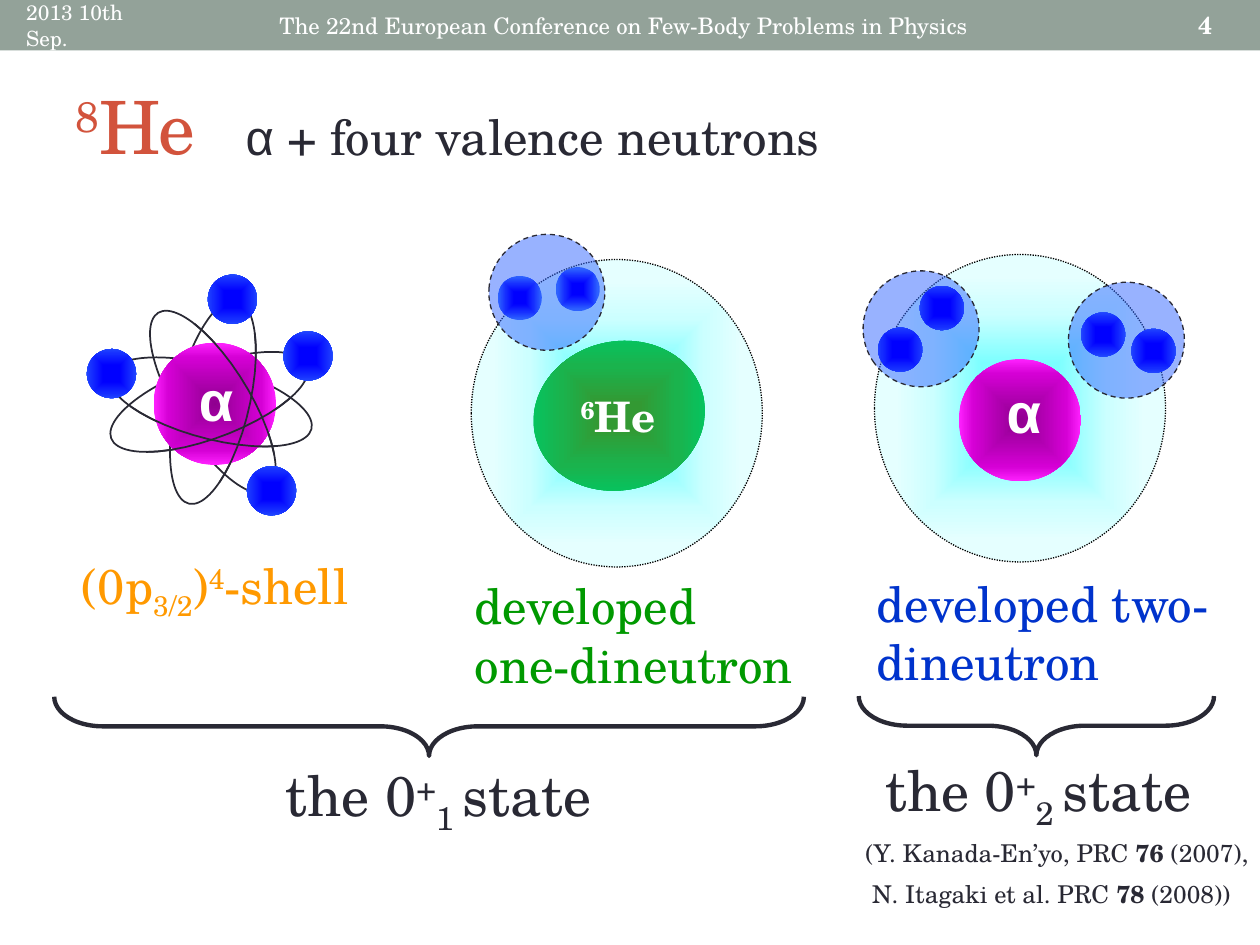
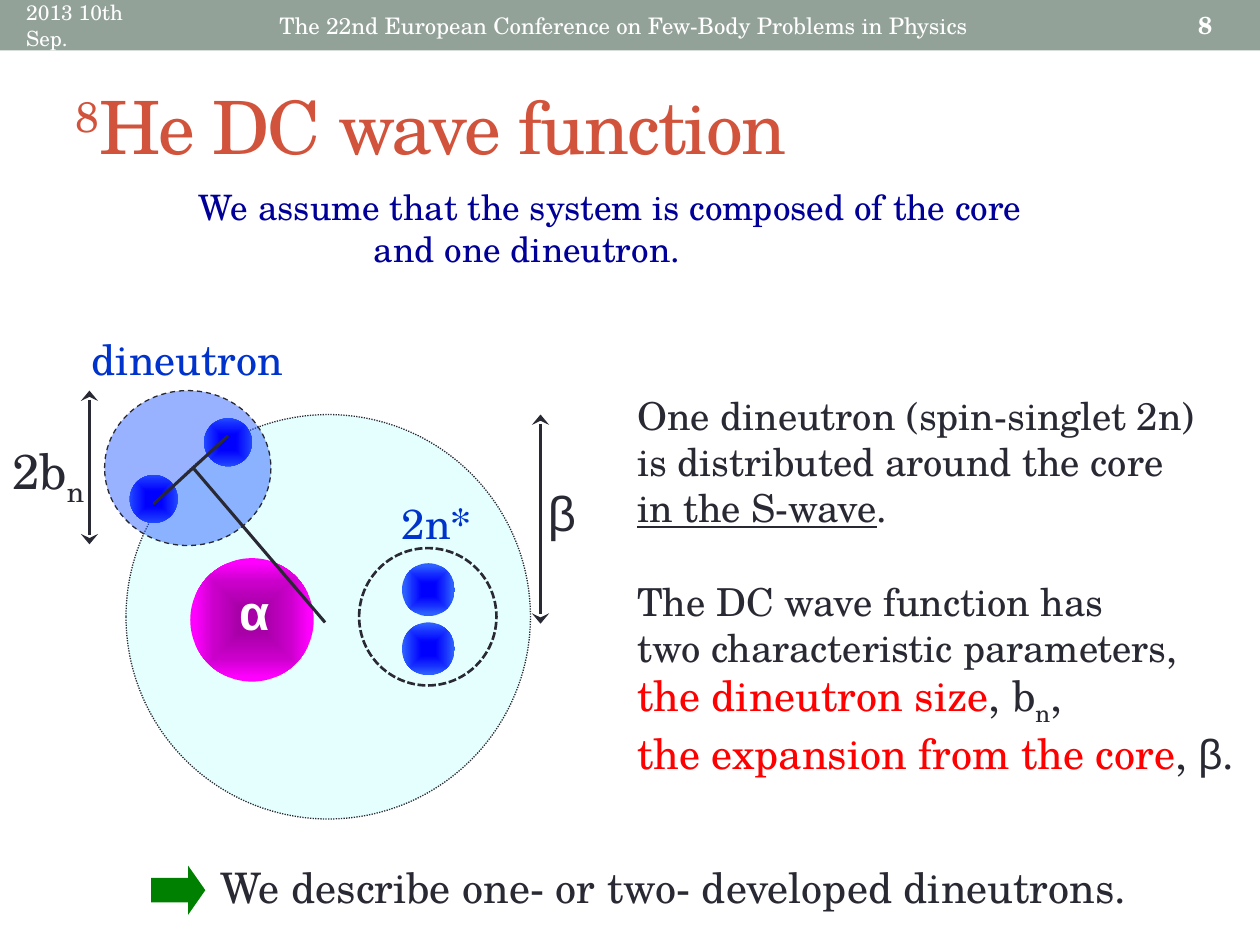
from math import cos, radians, sin

from lxml import etree
from pptx import Presentation
from pptx.dml.color import RGBColor
from pptx.enum.dml import MSO_LINE
from pptx.enum.shapes import MSO_CONNECTOR, MSO_SHAPE
from pptx.enum.text import MSO_ANCHOR, PP_ALIGN
from pptx.oxml.ns import qn
from pptx.util import Inches, Pt

OVAL, RECT = MSO_SHAPE.OVAL, MSO_SHAPE.RECTANGLE
BRACE, ARROW = MSO_SHAPE.RIGHT_BRACE, MSO_SHAPE.RIGHT_ARROW
DOT, SHORT_DASH, DASH = MSO_LINE.ROUND_DOT, MSO_LINE.SQUARE_DOT, MSO_LINE.DASH
TOP, MIDDLE = MSO_ANCHOR.TOP, MSO_ANCHOR.MIDDLE
LEFT, CENTER = PP_ALIGN.LEFT, PP_ALIGN.CENTER

SERIF, SANS = "TeX Gyre Schola", "Arial"
INK, WHITE, BAND, TITLE = "292934", "FFFFFF", "93A299", "D2533C"
ORANGE, GREEN, BLUE, NAVY, RED = "FF9900", "009900", "0033CC", "000099", "FF0000"
ARROW_GREEN, DINEUTRON_BLUE, PALE_CYAN = "008000", "3366FF", "CCFFFF"

# Gradients run from the centre outwards: (percent, colour)
NEUTRON_GLOW = [(25, "0000FF"), (59, "152DFF"), (91, "2D61FF")]
ALPHA_GLOW = [(0, "8F008F"), (76, "D500D5"), (100, "FF21FF")]
BRIGHT_ALPHA_GLOW = [(19, "A600A6"), (63, "CC00CC"), (93, "FF00FF")]
HALO_GLOW = [(26, "7BFFFF"), (60, "CCFFFF"), (86, "E5FFFF")]
HE6_GLOW = [(13, "339933"), (54, "1AB34D"), (92, "00C864")]

SUP, SUB = {"base": 30}, {"base": -25}
BOLD, GREEK = {"bold": True}, {"font": SANS}

DATE = "2013 10th Sep."
CONFERENCE = "The 22nd European Conference on Few-Body Problems in Physics"

# A paragraph is a list of runs; a run is a string or (string, style).
# Labels: (left, top, width, height), size, colour, paragraphs
STATE_LABELS = [
    ((1.85, 0.8, 5.32, 0.57), 28, INK, [[("α", GREEK), " + four valence neutrons"]]),
    ((0.55, 4.36, 2.44, 0.57), 28, ORANGE,
     [["(0p", ("3/2", SUB), ")", ("4", SUP), "-shell"]]),
    ((3.67, 4.52, 2.78, 1.04), 28, GREEN, [["developed one-dineutron"]]),
    ((6.86, 4.5, 2.85, 1.04), 28, BLUE, [["developed two-dineutron"]]),
    ((2.17, 5.99, 3.38, 0.64), 32, INK,
     [["the 0", ("+", SUP), ("1 ", SUB), "state"]]),
    ((6.93, 5.95, 2.95, 0.64), 32, INK,
     [["the 0", ("+", SUP), ("2 ", SUB), "state"]]),
]
REFERENCES = [
    ["(Y. Kanada-En’yo, PRC ", ("76 ", BOLD), "(2007),"],
    [" N. Itagaki et al. PRC ", ("78", BOLD), " (2008))"],
]
BRACES = [(3.17, 2.79, 0.47, 5.95), (7.99, 4.35, 0.47, 2.82)]

# Shell model: (centre x, tilt) of each orbit, (left, top) of each neutron
ORBITS = [(1.69, 328.5), (1.69, 13.3), (1.67, 105.1), (1.66, 69.6)]
ORBIT_Y, ORBIT_RX, ORBIT_RY = 3.19, 0.29, 0.83
FRONT_ANGLE, FRONT_STEPS = 47, 11
SHELL_NEUTRONS = [(1.65, 2.18), (1.96, 3.7), (0.69, 2.77), (2.25, 2.63)]

# Dineutrons: (box, tilt), then (left, top, tilt) of the two neutrons
ONE_DINEUTRON = [
    ((3.88, 1.86, 0.92, 0.92), 3.7, [(3.95, 2.19, 356.7), (4.41, 2.12, 0)]),
]
TWO_DINEUTRONS = [
    ((6.85, 2.15, 0.92, 0.92), 324.1, [(6.97, 2.6, 317.1), (7.3, 2.27, 320.4)]),
    ((8.48, 2.24, 0.92, 0.92), 30.8, [(8.58, 2.48, 23.8), (8.98, 2.61, 27)]),
]

ASSUMPTION = [["We assume that the system is composed of the core and one dineutron."]]
EXPLANATION = [
    ["One dineutron (spin-singlet 2n)"],
    ["is distributed around the core"],
    [("in the S-wave", {"underline": True}), "."],
    ["The DC wave function has"],
    ["two characteristic parameters,"],
]
PARAMETERS = [
    [("the dineutron size", {"color": RED}), ", b", ("n", SUB), ","],
    [("the expansion from the core", {"color": RED}), ", ", ("β", GREEK), "."],
]
for parameter in PARAMETERS:
    EXPLANATION.append([(run, {"size": 24}) if isinstance(run, str)
                        else (run[0], {"size": 24, **run[1]}) for run in parameter])

WAVE_LABELS = [
    ((4.25, 3.78, 0.4, 0.57), 28, INK, [[("β", GREEK)]]),
    ((0, 3.45, 0.8, 0.57), 28, INK, [["2b", ("n", SUB)]]),
    ((3.09, 3.9, 1.09, 0.61), 24, BLUE, [["2n*"]]),
    ((0.63, 2.6, 1.73, 0.5), 24, BLUE, [["dineutron"]]),
    ((1.65, 6.79, 7.52, 0.5), 24, INK,
     [["We describe one- or two- developed dineutrons."]]),
]
SIZE_ARROWS = [((0.71, 3.1), (0.71, 4.32)), ((4.29, 3.29), (4.29, 4.95))]
DISTANCES = [((1.53, 3.71), (2.58, 4.94)), ((1.81, 3.46), (1.22, 4))]
WAVE_DINEUTRON = ((0.83, 3.1, 1.32, 1.23), 0, [(1.62, 3.32, 248.3), (1.03, 3.77, 248.3)])
EXCITED_PAIR = [(3.19, 4.47, 0), (3.19, 4.94, 3)]


def rgb(color):
    return RGBColor.from_string(color)


def inches(values):
    return [Inches(value) for value in values]


def write(frame, paragraphs, size, color, align=LEFT, anchor=TOP, **defaults):
    frame.word_wrap = True
    frame.vertical_anchor = anchor
    for number, runs in enumerate(paragraphs):
        paragraph = frame.paragraphs[0] if number == 0 else frame.add_paragraph()
        paragraph.alignment = align
        for run in runs:
            words, own = (run, {}) if isinstance(run, str) else run
            style = {"font": SERIF, "size": size, "color": color, **defaults, **own}
            piece = paragraph.add_run()
            piece.text = words
            piece.font.name = style["font"]
            piece.font.size = Pt(style["size"])
            piece.font.bold = style.get("bold", False)
            piece.font.underline = style.get("underline", False)
            piece.font.color.rgb = rgb(style["color"])
            properties = piece.font._element
            if "base" in style:
                properties.set("baseline", str(style["base"] * 1000))
            if "spacing" in style:
                properties.set("spc", str(style["spacing"] * 100))


def label(slide, box, size, color, paragraphs, **style):
    frame = slide.shapes.add_textbox(*inches(box)).text_frame
    write(frame, paragraphs, size, color, **style)
    return frame


def outline(shape, color, width, dash=None):
    shape.line.color.rgb = rgb(color)
    shape.line.width = Pt(width)
    if dash is not None:
        shape.line.dash_style = dash


def glow(shape, stops):
    """Fill the shape with a gradient spreading from its centre."""
    shape.fill.background()
    gradient = etree.Element(qn("a:gradFill"), rotWithShape="1")
    stop_list = etree.SubElement(gradient, qn("a:gsLst"))
    for percent, color in stops:
        stop = etree.SubElement(stop_list, qn("a:gs"), pos=str(percent * 1000))
        etree.SubElement(stop, qn("a:srgbClr"), val=color)
    spread = etree.SubElement(gradient, qn("a:path"), path="shape")
    etree.SubElement(spread, qn("a:fillToRect"), dict.fromkeys("ltrb", "50000"))
    properties = shape._element.spPr
    properties.replace(properties.find(qn("a:noFill")), gradient)


def figure(slide, kind, box, fill=None, line=None, tilt=0, alpha=None):
    """Add a shape; fill is a colour or gradient stops, line is (colour, width, dash)."""
    shape = slide.shapes.add_shape(kind, *inches(box))
    shape.shadow.inherit = False
    shape.rotation = tilt
    if fill is None:
        shape.fill.background()
    elif isinstance(fill, list):
        glow(shape, fill)
    else:
        shape.fill.solid()
        shape.fill.fore_color.rgb = rgb(fill)
    if alpha:
        tint = shape._element.spPr.find(qn("a:solidFill")).find(qn("a:srgbClr"))
        etree.SubElement(tint, qn("a:alpha"), val=str(alpha * 1000))
    if line:
        outline(shape, *line)
    else:
        shape.line.fill.background()
    return shape


def neutron(slide, left, top, tilt, size):
    figure(slide, OVAL, (left, top, size, size), NEUTRON_GLOW, tilt=tilt)


def dineutron(slide, box, tilt, neutrons, size=0.35):
    figure(slide, OVAL, box, DINEUTRON_BLUE, (INK, 0.75, DASH), tilt, alpha=50)
    for place in neutrons:
        neutron(slide, *place, size)


def alpha_core(slide, left, top, size, letter_box, letter_size, stops=ALPHA_GLOW):
    figure(slide, OVAL, (left, top, size, size), stops)
    label(slide, letter_box, letter_size, WHITE, [["α"]], font=SANS, bold=True)


def halo(slide, left, top):
    figure(slide, OVAL, (left, top, 2.31, 2.44), HALO_GLOW, ("000000", 0.75, DOT))


def orbit_front(slide, center_x, tilt):
    """Redraw the side of an orbit that passes in front of the core."""
    turn = radians(tilt)
    points = []
    for step in range(FRONT_STEPS + 1):
        angle = radians(FRONT_ANGLE * (2 * step / FRONT_STEPS - 1))
        x, y = ORBIT_RX * cos(angle), ORBIT_RY * sin(angle)
        points.append((Inches(center_x + x * cos(turn) - y * sin(turn)),
                       Inches(ORBIT_Y + x * sin(turn) + y * cos(turn))))
    builder = slide.shapes.build_freeform(*points[0], scale=1.0)
    builder.add_line_segments(points[1:], close=False)
    arc = builder.convert_to_shape()
    arc.shadow.inherit = False
    arc.fill.background()
    outline(arc, INK, 1)


def segment(slide, start, end, width, arrowheads=False):
    line = slide.shapes.add_connector(
        MSO_CONNECTOR.STRAIGHT, *inches(start), *inches(end))
    outline(line, INK, width)
    if arrowheads:
        for side in ("headEnd", "tailEnd"):
            etree.SubElement(line.line._get_or_add_ln(), qn(f"a:{side}"),
                             type="stealth", w="lg", len="med")
    etree.SubElement(line._element.spPr, qn("a:effectLst"))


def add_band(slide):
    """Place the top band on the slide's layout, behind everything else."""
    band = figure(slide, RECT, (0, 0, 10, 0.4), BAND)
    slide.slide_layout.shapes._spTree.insert(2, band._element)


def start_slide(deck, number, title_runs):
    slide = deck.slides.add_slide(deck.slide_layouts[5])
    title = slide.shapes.title
    title.left, title.top, title.width, title.height = inches((0.5, 0.45, 9, 1.08))
    write(title.text_frame, [title_runs], 42, TITLE, anchor=MIDDLE, spacing=-1)
    label(slide, (0.11, 0.02, 1.31, 0.36), 12, WHITE, [[DATE]], anchor=MIDDLE)
    label(slide, (2.01, 0.02, 5.87, 0.36), 13, WHITE, [[CONFERENCE]],
          align=CENTER, anchor=MIDDLE)
    label(slide, (9.41, 0.02, 0.45, 0.36), 14, WHITE, [[str(number)]],
          anchor=MIDDLE, bold=True)
    return slide


def build_states(deck):
    slide = start_slide(deck, 4, [("8", SUP), "He"])
    add_band(slide)

    for center_x, tilt in ORBITS:
        box = (center_x - ORBIT_RX, ORBIT_Y - ORBIT_RY, 2 * ORBIT_RX, 2 * ORBIT_RY)
        figure(slide, OVAL, box, line=(INK, 1), tilt=tilt)
    alpha_core(slide, 1.22, 2.72, 0.97, (1.48, 2.85, 0.55, 0.64), 32)
    for orbit in ORBITS:
        orbit_front(slide, *orbit)
    for left, top in SHELL_NEUTRONS:
        neutron(slide, left, top, 332.5, 0.39)

    halo(slide, 3.74, 2.06)
    figure(slide, OVAL, (4.23, 2.71, 1.37, 1.18), HE6_GLOW, tilt=346.6)
    label(slide, (4.51, 3.05, 0.89, 0.5), 24, WHITE, [[("6", SUP), "He"]], bold=True)
    for pair in ONE_DINEUTRON:
        dineutron(slide, *pair)

    halo(slide, 6.94, 2.02)
    alpha_core(slide, 7.61, 2.85, 0.97, (7.89, 2.95, 0.55, 0.64), 32)
    for pair in TWO_DINEUTRONS:
        dineutron(slide, *pair)

    for box in BRACES:
        brace = figure(slide, BRACE, box, line=(INK, 2.5), tilt=90)
        brace.adjustments[0] = 0.82
    for item in STATE_LABELS:
        label(slide, *item)
    references = label(slide, (6.77, 6.6, 3.57, 0.69), 14, INK, REFERENCES)
    references.paragraphs[1].space_before = Pt(7)


def build_wave_function(deck):
    slide = start_slide(deck, 8, [("8", SUP), "He DC wave function"])
    assumption = label(slide, (1.48, 1.42, 7.3, 0.77), 20, NAVY, ASSUMPTION)
    hanging = assumption.paragraphs[0]._p.get_or_add_pPr()
    for side, length in (("marL", 1.39), ("marR", 0.3), ("indent", -1.39)):
        hanging.set(side, str(Inches(length)))
    explanation = label(slide, (4.96, 3.06, 5.12, 3.13), 22, INK, EXPLANATION)
    explanation.paragraphs[3].space_before = Pt(27)

    figure(slide, OVAL, (1, 3.29, 3.21, 3.21), PALE_CYAN, (INK, 0.75, DOT), alpha=50)
    for ends in SIZE_ARROWS:
        segment(slide, *ends, 1.25, arrowheads=True)
    alpha_core(slide, 1.51, 4.43, 0.98, (1.8, 4.57, 0.66, 0.57), 28, BRIGHT_ALPHA_GLOW)
    for place in EXCITED_PAIR:
        neutron(slide, *place, 0.42)
    figure(slide, OVAL, (2.85, 4.35, 1.09, 1.09), line=(INK, 1.5, SHORT_DASH))
    dineutron(slide, *WAVE_DINEUTRON, size=0.38)
    for ends in DISTANCES:
        segment(slide, *ends, 1.75)
    for item in WAVE_LABELS:
        label(slide, *item)
    pointer = figure(slide, ARROW, (1.2, 6.87, 0.43, 0.39), ARROW_GREEN)
    pointer.adjustments[1] = 0.35


def main():
    deck = Presentation()
    deck.slide_width, deck.slide_height = inches((10, 7.5))
    build_states(deck)
    build_wave_function(deck)
    deck.save("out.pptx")


if __name__ == "__main__":
    main()
